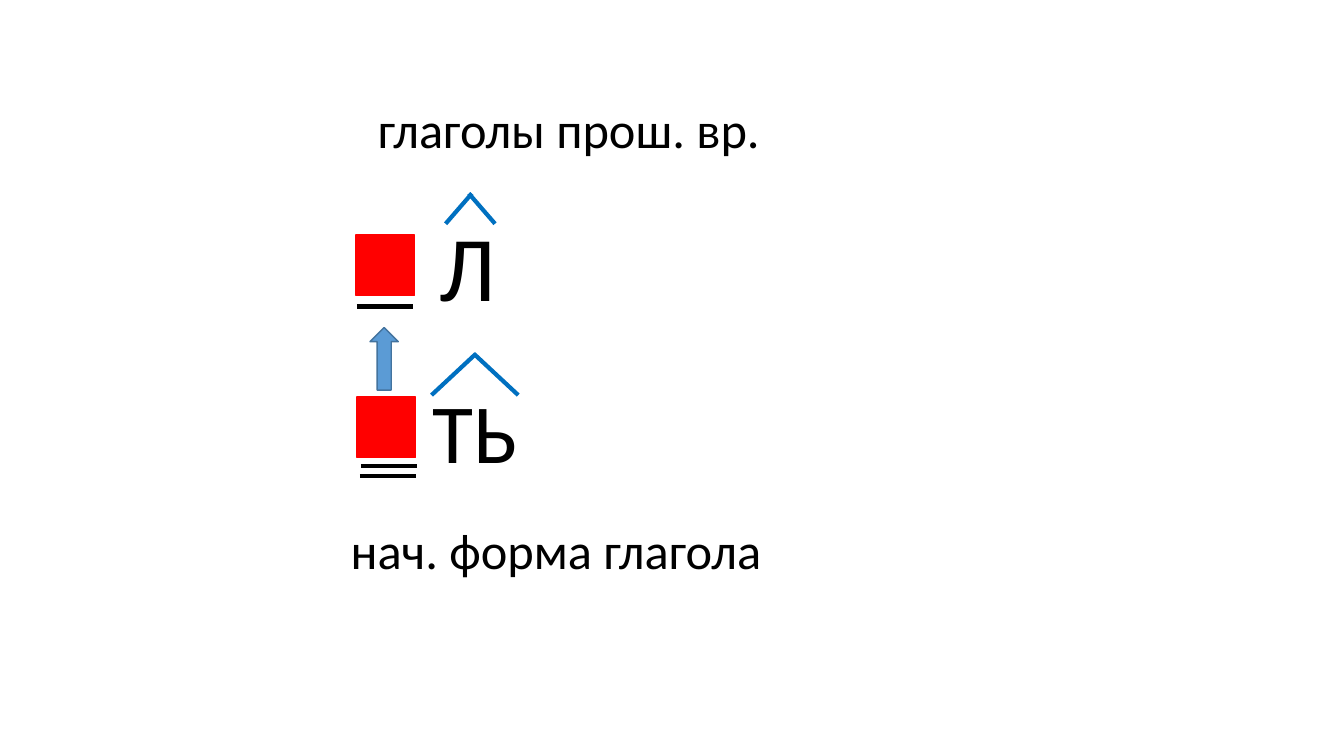
from pptx import Presentation
from pptx.dml.color import RGBColor
from pptx.enum.shapes import MSO_AUTO_SHAPE_TYPE, MSO_CONNECTOR
from pptx.enum.text import MSO_AUTO_SIZE
from pptx.oxml.ns import qn
from pptx.util import Inches, Pt
from lxml.etree import SubElement

CELL = Inches(0.1)  # side of one square of the layout grid
COLORS = {
    "text": "000000",
    "stem": "FF0000",
    "suffix": "0070C0",
    "arrow": "5B9BD5",
    "arrow_edge": "43739E",
}


def grid(*cells):
    return [round(cell * CELL) for cell in cells]


def color(name):
    return RGBColor.from_string(COLORS[name])


def add_label(slide, text, size, column, row, columns, rows):
    box = slide.shapes.add_textbox(*grid(column, row, columns, rows))
    frame = box.text_frame
    frame.text = text
    frame.word_wrap = True
    frame.auto_size = MSO_AUTO_SIZE.SHAPE_TO_FIT_TEXT
    font = frame.paragraphs[0].runs[0].font
    font.name = "Calibri"
    font.size = Pt(size)
    font.color.rgb = color("text")


def add_block(slide, kind, fill, edge, column, row, columns, rows):
    block = slide.shapes.add_shape(kind, *grid(column, row, columns, rows))
    block.shadow.inherit = False
    block.fill.solid()
    block.fill.fore_color.rgb = color(fill)
    block.line.color.rgb = color(edge)
    block.line.width = Pt(1)


def add_stroke(slide, name, start, end):
    stroke = slide.shapes.add_connector(
        MSO_CONNECTOR.STRAIGHT, *grid(*start, *end))
    stroke.line.color.rgb = color(name)
    stroke.line.width = Pt(3)
    SubElement(stroke._element.spPr, qn("a:effectLst"))


def add_suffix_mark(slide, left, right, top, bottom, overlap):
    """Draw the roof over a suffix; its two strokes cross at the peak."""
    middle = (left + right) / 2
    add_stroke(slide, "suffix", (left, bottom), (middle + overlap, top))
    add_stroke(slide, "suffix", (right, bottom), (middle - overlap, top))


def add_stem(slide, column, row):
    add_block(slide, MSO_AUTO_SHAPE_TYPE.RECTANGLE, "stem", "stem",
              column, row, 5.8, 6)


def add_underline(slide, column, row):
    add_stroke(slide, "text", (column, row), (column + 5.6, row))


def main():
    deck = Presentation()
    deck.slide_width, deck.slide_height = Inches(13.33), Inches(7.5)
    slide = deck.slides.add_slide(deck.slide_layouts[6])

    add_label(slide, "глаголы прош. вр.", 36, 36.5, 9.2, 54, 7.1)
    add_stem(slide, 35.3, 23.3)
    add_label(slide, "Л", 66, 42.6, 20.3, 10.3, 12.1)
    add_suffix_mark(slide, 44.2, 49.1, 19.2, 22.2, 0.15)
    add_underline(slide, 35.4, 30.4)

    add_label(slide, "нач. форма глагола", 36, 33.8, 51, 54, 7.1)
    add_stem(slide, 35.4, 39.4)
    add_label(slide, "ТЬ", 60, 41.9, 37.2, 11.8, 11.1)
    add_suffix_mark(slide, 42.8, 51.4, 35.1, 39.2, 0.1)
    add_block(slide, MSO_AUTO_SHAPE_TYPE.UP_ARROW, "arrow", "arrow_edge",
              36.7, 32.5, 2.8, 6.2)
    add_underline(slide, 35.8, 46.2)
    add_underline(slide, 35.7, 47.2)

    deck.save("out.pptx")


if __name__ == "__main__":
    main()
